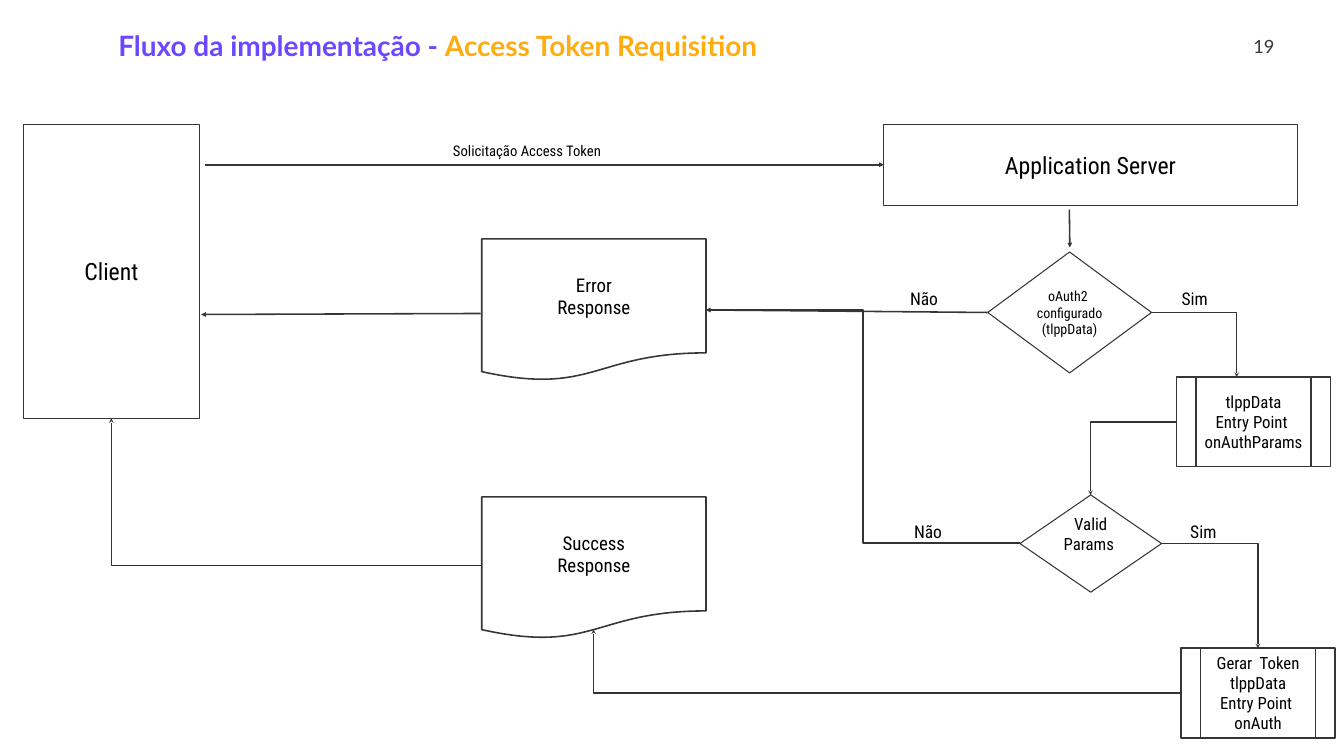
from lxml import etree
from pptx import Presentation
from pptx import util as u
from pptx.dml.color import RGBColor
from pptx.enum import shapes, text
from pptx.oxml.ns import qn

Inches = u.Inches
FONT, INK, GREY, BLACK = "Roboto Condensed", "363636", "333333", "000000"


def color(code):
    return RGBColor.from_string(code)


def write(shape, paras, size, face=FONT, code=BLACK, align=None, pad=0.1):
    """Fill a shape's text frame, one paragraph per item."""
    frame = shape.text_frame
    frame.word_wrap = True
    frame.margin_left = frame.margin_right = Inches(0.1)
    frame.margin_top = frame.margin_bottom = Inches(pad)
    for i, line in enumerate(paras):
        para = frame.paragraphs[0] if i == 0 else frame.add_paragraph()
        para.text = line
        para.alignment = align
        para.font.size = u.Pt(size)
        para.font.name = face
        para.font.color.rgb = color(code)
    return frame


deck = Presentation()
deck.slide_width, deck.slide_height = Inches(26.67), Inches(15)
slide = deck.slides.add_slide(deck.slide_layouts[6])
items = slide.shapes

# Title in two colours
title = items.add_textbox(*map(Inches, (2.25, 0.52, 14.85, 0.82)))
frame = write(title, [""], 40, "Lato", "6B48FF", pad=0.05)
for words, code in (("Fluxo da implementação - ", "6B48FF"),
                    ("Access Token Requisition", "FEAC0E")):
    run = frame.paragraphs[0].add_run()
    run.text = words
    run.font.bold = True
    run.font.color.rgb = color(code)

# Page number
page = items.add_textbox(*map(Inches, (24.29, 0.5, 1.1, 0.82)))
frame = write(page, ["19"], 26, "Lato", INK, text.PP_ALIGN.RIGHT, 0.05)
frame.vertical_anchor = text.MSO_ANCHOR.MIDDLE

# Flow nodes: kind, box, line width, text size, paragraphs
kind = shapes.MSO_SHAPE
RECT, CHOICE = kind.RECTANGLE, kind.FLOWCHART_DECISION
PROC, DOC = kind.FLOWCHART_PREDEFINED_PROCESS, kind.FLOWCHART_DOCUMENT
nodes = [
    (RECT, (0.47, 2.47, 3.48, 5.83), 1.5, 34, ["Client"]),
    (RECT, (17.54, 2.47, 8.2, 1.61), 1.5, 34, ["Application Server"]),
    (CHOICE, (19.6, 5, 3.25, 2.4), 1.5, 20, ["oAuth2  configurado\n(tlppData)"]),
    (PROC, (23.35, 7.48, 3.05, 1.78), 2.25, 24,
     ["tlppData", "Entry Point \nonAuthParams"]),
    (CHOICE, (20.24, 9.82, 2.81, 1.93), 1.5, 24, ["Valid\nParams \n"]),
    (DOC, (9.56, 4.74, 4.45, 2.82), 2.25, 27, ["Error", "Response"]),
    (PROC, (23.44, 12.86, 3.05, 1.78), 2.25, 24,
     ["Gerar  Token", "tlppData", "Entry Point \nonAuth"]),
    (DOC, (9.56, 9.86, 4.45, 2.82), 2.25, 27, ["Success", "Response"]),
]
for form, box, width, size, paras in nodes:
    node = items.add_shape(form, *map(Inches, box))
    node.shadow.inherit = False
    node.fill.background()
    node.line.color.rgb = color(INK)
    node.line.width = u.Pt(width)
    frame = write(node, paras, size, align=text.PP_ALIGN.CENTER)
    frame.vertical_anchor = text.MSO_ANCHOR.MIDDLE

# Arrows: start, end, preset; elbows leave sideways
links = [
    ((4.07, 3.27), (17.54, 3.27), "line"),
    ((21.22, 4.16), (21.23, 4.91), "line"),
    ((19.6, 6.2), (14.01, 6.15), "line"),
    ((9.54, 6.22), (3.99, 6.24), "line"),
    ((22.85, 6.2), (24.54, 7.48), "bentConnector2"),
    ((23.35, 8.37), (21.64, 9.82), "bentConnector2"),
    ((23.05, 10.78), (24.96, 12.86), "bentConnector2"),
    ((20.24, 10.78), (14.01, 6.15), "bentConnector3"),
    ((23.44, 13.75), (11.78, 12.49), "bentConnector2"),
    ((9.54, 11.22), (2.21, 8.3), "bentConnector2"),
]
for start, end, preset in links:
    straight = preset == "line"
    form = shapes.MSO_CONNECTOR.STRAIGHT if straight else shapes.MSO_CONNECTOR.ELBOW
    link = items.add_connector(form, *map(Inches, start + end))
    link.line.color.rgb = color(INK if straight else GREY)
    link.line.width = u.Pt(2.25)
    props = link._element.spPr
    props.find(qn("a:prstGeom")).set("prst", preset)
    tip = etree.SubElement(props.find(qn("a:ln")), qn("a:tailEnd"))
    tip.set("type", "triangle" if straight else "stealth")
    etree.SubElement(props, qn("a:effectLst"))

# Arrow labels
labels = [
    ("Solicitação Access Token", 8.89, 2.72, 3.25, 0.56, 21),
    ("Sim", 23.35, 5.61, 1.52, 0.62, 25),
    ("Não", 17.96, 5.61, 1.52, 0.62, 25),
    ("Sim", 23.52, 10.24, 1.52, 0.62, 25),
    ("Não", 18.04, 10.24, 1.52, 0.62, 25),
]
for words, *box, size in labels:
    write(items.add_textbox(*map(Inches, box)), [words], size)

deck.save("out.pptx")
